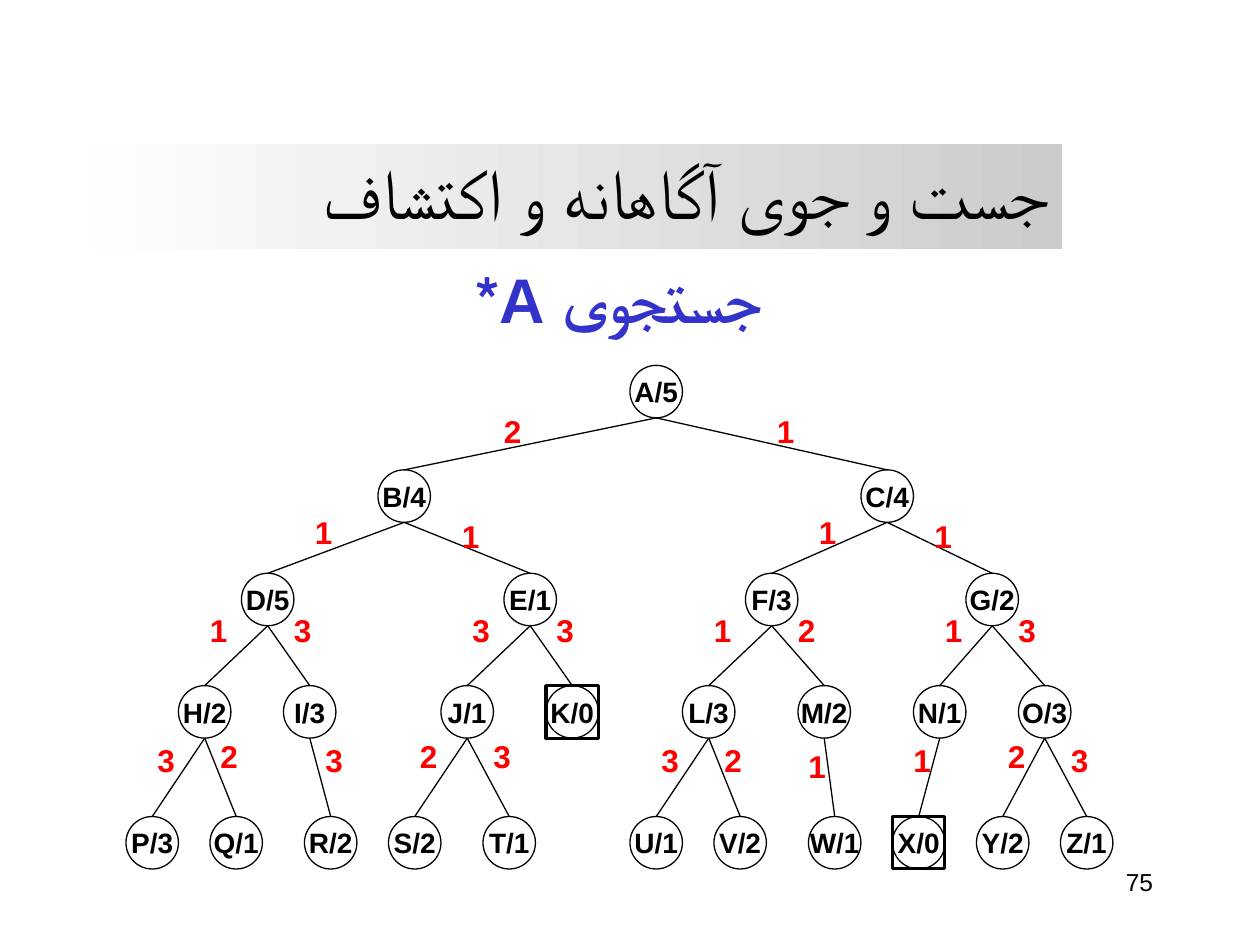
from lxml.etree import SubElement
from pptx import Presentation
from pptx.dml.color import RGBColor
from pptx.enum.shapes import MSO_CONNECTOR, MSO_SHAPE
from pptx.enum.text import MSO_ANCHOR, MSO_AUTO_SIZE, PP_ALIGN
from pptx.oxml.ns import qn
from pptx.util import Pt

COLORS = {"ink": "000000", "paper": "FFFFFF", "band": "CCCCCC", "heading": "3333CC", "cost": "FF0000"}
UNIT = 6
NODE_SIZE = 30
LEVEL_TOPS = [0, 59.7, 118.8, 183, 257.8]
COST_TOPS = [0, 26.6, 84.2, 140.4, 214.6]
GOALS = {"K/0", "X/0"}
# label: parent, level, node column, cost, cost column, cost shift
TREE = {
    "A/5": (None, 0, 48, None, 0, 0),
    "B/4": ("A/5", 1, 24, 2, 36, 0),
    "C/4": ("A/5", 1, 70, 1, 62, 0),
    "D/5": ("B/4", 2, 11, 1, 18, 0),
    "E/1": ("B/4", 2, 36, 1, 32, 2.2),
    "F/3": ("C/4", 2, 59, 1, 66, 0),
    "G/2": ("C/4", 2, 80, 1, 77, 2.2),
    "H/2": ("D/5", 3, 5, 1, 8, 0),
    "I/3": ("D/5", 3, 15, 3, 16, 0),
    "J/1": ("E/1", 3, 30, 3, 33, 0),
    "K/0": ("E/1", 3, 40, 3, 41, 0),
    "L/3": ("F/3", 3, 53, 1, 56, 0),
    "M/2": ("F/3", 3, 64, 2, 64, 0),
    "N/1": ("G/2", 3, 75, 1, 78, 0),
    "O/3": ("G/2", 3, 85, 3, 85, 0),
    "P/3": ("H/2", 4, 0, 3, 3, 0),
    "Q/1": ("H/2", 4, 8, 2, 9, -2.2),
    "R/2": ("I/3", 4, 17, 3, 19, 0),
    "S/2": ("J/1", 4, 25, 2, 28, -2.2),
    "T/1": ("J/1", 4, 34, 3, 35, -2.2),
    "U/1": ("L/3", 4, 48, 3, 51, 0),
    "V/2": ("L/3", 4, 56, 2, 57, 0),
    "W/1": ("M/2", 4, 65, 1, 65, 3.6),
    "X/0": ("N/1", 4, 73, 1, 75, 0),
    "Y/2": ("O/3", 4, 81, 2, 84, -2.2),
    "Z/1": ("O/3", 4, 89, 3, 90, 0),
}


def color(name):
    """Return the named colour."""
    return RGBColor.from_string(COLORS[name])


def write(shape, text, size, ink, align, bold=False, font="Arial"):
    """Write one formatted paragraph into a shape and return it."""
    paragraph = shape.text_frame.paragraphs[0]
    paragraph.text = text
    paragraph.alignment = align
    paragraph.font.name = font
    paragraph.font.size = Pt(size)
    paragraph.font.bold = bold
    paragraph.font.color.rgb = color(ink)
    return paragraph


def add_text(slide, box, text, size, ink, align, bold=False):
    """Add a wrapping text box and return it with its paragraph."""
    shape = slide.shapes.add_textbox(*map(Pt, box))
    shape.text_frame.word_wrap = True
    return shape, write(shape, text, size, ink, align, bold)


def add_title(slide, box):
    """Place the title on its gradient band."""
    title = slide.shapes.title
    title.left, title.top, title.width, title.height = map(Pt, box)
    title.fill.gradient()
    title.fill.gradient_angle = 0
    for stop, name, position in zip(title.fill.gradient_stops, ("paper", "band"), (0, 1)):
        stop.color.rgb = color(name)
        stop.position = position
    title.text_frame.vertical_anchor = MSO_ANCHOR.TOP
    title.text_frame.auto_size = MSO_AUTO_SIZE.SHAPE_TO_FIT_TEXT
    write(title, "جست و جوی آگاهانه و اکتشاف", 40, "ink", PP_ALIGN.RIGHT, font="Times New Roman")


def add_subtitle(slide, box):
    """Place the right-to-left heading above the tree."""
    _, paragraph = add_text(slide, box, "جستجوی A*", 36, "heading", PP_ALIGN.CENTER, True)
    paragraph._p.get_or_add_pPr().set("rtl", "1")


def add_outline(slide, kind, left, top, weight):
    """Add a node-sized outline shape."""
    shape = slide.shapes.add_shape(kind, Pt(left), Pt(top), Pt(NODE_SIZE), Pt(NODE_SIZE))
    shape.shadow.inherit = False
    shape.fill.background()
    shape.line.color.rgb = color("ink")
    shape.line.width = Pt(weight)
    return shape


def add_node(slide, label, left, top):
    """Add a labelled circle, framed by a square when it is a goal."""
    circle = add_outline(slide, MSO_SHAPE.OVAL, left, top, 0.75)
    circle.fill.solid()
    circle.fill.fore_color.rgb = color("paper")
    circle.text_frame.word_wrap = False
    circle.text_frame.vertical_anchor = MSO_ANCHOR.MIDDLE
    write(circle, label, 16, "ink", PP_ALIGN.CENTER, True)
    if label in GOALS:
        add_outline(slide, MSO_SHAPE.RECTANGLE, left, top, 1.75)
    return circle


def add_edge(slide, parent, child):
    """Draw a line from the bottom of the parent to the top of the child."""
    edge = slide.shapes.add_connector(
        MSO_CONNECTOR.STRAIGHT,
        parent.left + parent.width // 2, parent.top + parent.height,
        child.left + child.width // 2, child.top)
    edge.line.color.rgb = color("ink")
    edge.line.width = Pt(0.75)
    SubElement(edge._element.spPr, qn("a:effectLst"))


def add_cost(slide, cost, left, top):
    """Add the cost of an edge."""
    shape, _ = add_text(slide, (left, top, 6, 21.6), str(cost), 18, "cost", PP_ALIGN.LEFT, True)
    frame = shape.text_frame
    frame.margin_left = frame.margin_top = frame.margin_right = frame.margin_bottom = 0


def add_tree(slide, left, top):
    """Build the search tree from its top left corner."""
    circles = {}
    for label, (parent, level, column, cost, cost_column, shift) in TREE.items():
        circles[label] = add_node(slide, label, left + column * UNIT, top + LEVEL_TOPS[level])
        if parent:
            add_edge(slide, circles[parent], circles[label])
            add_cost(slide, cost, left + cost_column * UNIT, top + COST_TOPS[level] + shift)


def main():
    """Build and save the slide."""
    presentation = Presentation()
    presentation.slide_width, presentation.slide_height = Pt(720), Pt(540)
    slide = presentation.slides.add_slide(presentation.slide_layouts[5])
    add_title(slide, (31, 82.1, 576, 55.4))
    add_subtitle(slide, (47.5, 145.4, 612.7, 50.4))
    add_tree(slide, 72, 208.8)
    add_text(slide, (516.2, 491.8, 149.8, 36), "75", 14, "ink", PP_ALIGN.RIGHT)
    presentation.save("out.pptx")


if __name__ == "__main__":
    main()
